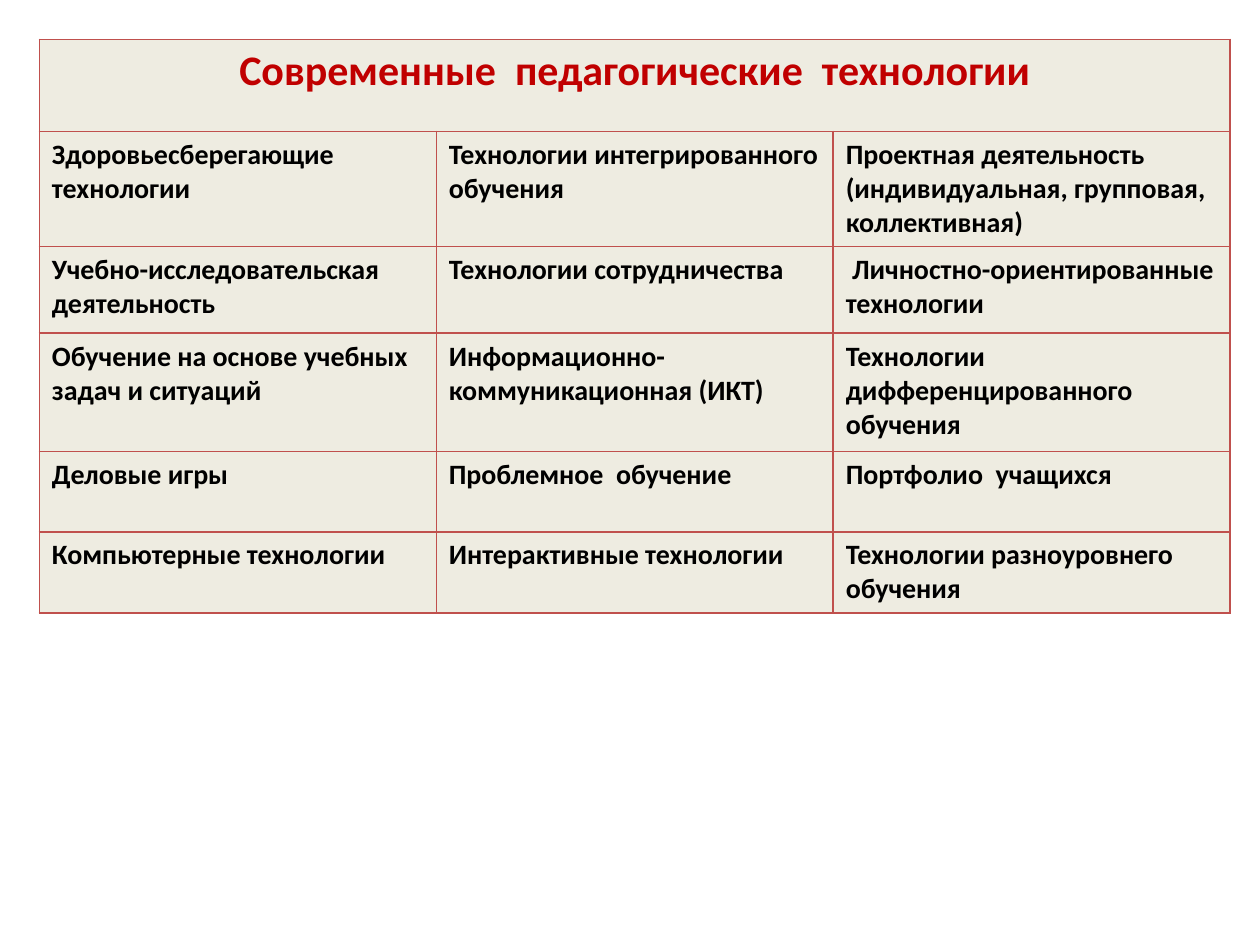
from lxml.etree import SubElement as Sub
from pptx import Presentation
from pptx.dml.color import RGBColor as RGB
from pptx.enum.text import PP_ALIGN as Align
from pptx.oxml.ns import qn
from pptx.util import Pt

TITLE = "Современные  педагогические  технологии"
ROWS = [
    ("Здоровьесберегающие технологии",
     "Технологии интегрированного\nобучения",
     "Проектная деятельность (индивидуальная, групповая, коллективная)"),
    ("Учебно-исследовательская деятельность",
     "Технологии сотрудничества",
     " Личностно-ориентированные технологии"),
    ("Обучение на основе учебных задач и ситуаций",
     "Информационно-коммуникационная (ИКТ)",
     "Технологии дифференцированного обучения"),
    ("Деловые игры", "Проблемное  обучение", "Портфолио  учащихся"),
    ("Компьютерные технологии",
     "Интерактивные технологии",
     "Технологии разноуровнего обучения"),
]
HEIGHTS = [52.5, 64, 49.5, 67.5, 46, 44]
LEFT, TOP, WIDTH = 22.5, 22.5, 680.4
CREAM = RGB(0xEE, 0xEC, 0xE1)
RED = RGB(0xC0, 0x00, 0x00)
BLACK = RGB(0, 0, 0)
BRICK = RGB(0xC0, 0x50, 0x4D)
HEAD = {"name": "Calibri", "size": Pt(24), "bold": True}
BODY = {"name": "Calibri", "size": Pt(16), "bold": True}


def edge(cell):
    props = cell._tc.get_or_add_tcPr()
    for side in ("lnL", "lnR", "lnT", "lnB"):
        line = Sub(props, qn(f"a:{side}"), w=str(Pt(1)))
        fill = Sub(line, qn("a:solidFill"))
        Sub(fill, qn("a:srgbClr"), val=str(BRICK))


def dress(cell, text, style, color, align):
    edge(cell)
    cell.fill.solid()
    cell.fill.fore_color.rgb = CREAM
    cell.text = text
    for para in cell.text_frame.paragraphs:
        para.alignment = align
        for run in para.runs:
            for key, value in style.items():
                setattr(run.font, key, value)
            run.font.color.rgb = color


deck = Presentation()
deck.slide_width, deck.slide_height = Pt(720), Pt(540)
slide = deck.slides.add_slide(deck.slide_layouts[6])
count = len(ROWS[0])
frame = slide.shapes.add_table(len(HEIGHTS), count, Pt(LEFT), Pt(TOP),
                               Pt(WIDTH), Pt(sum(HEIGHTS)))
table = frame.table
table.first_row = table.horz_banding = False
for row, height in zip(table.rows, HEIGHTS):
    row.height = Pt(height)
for col in table.columns:
    col.width = Pt(WIDTH / count)

table.cell(0, 0).merge(table.cell(0, count - 1))
for c in range(count):
    dress(table.cell(0, c), "" if c else TITLE, HEAD, RED, Align.CENTER)
for r, texts in enumerate(ROWS, 1):
    for c, text in enumerate(texts):
        dress(table.cell(r, c), text, BODY, BLACK, Align.LEFT)

deck.save("out.pptx")
